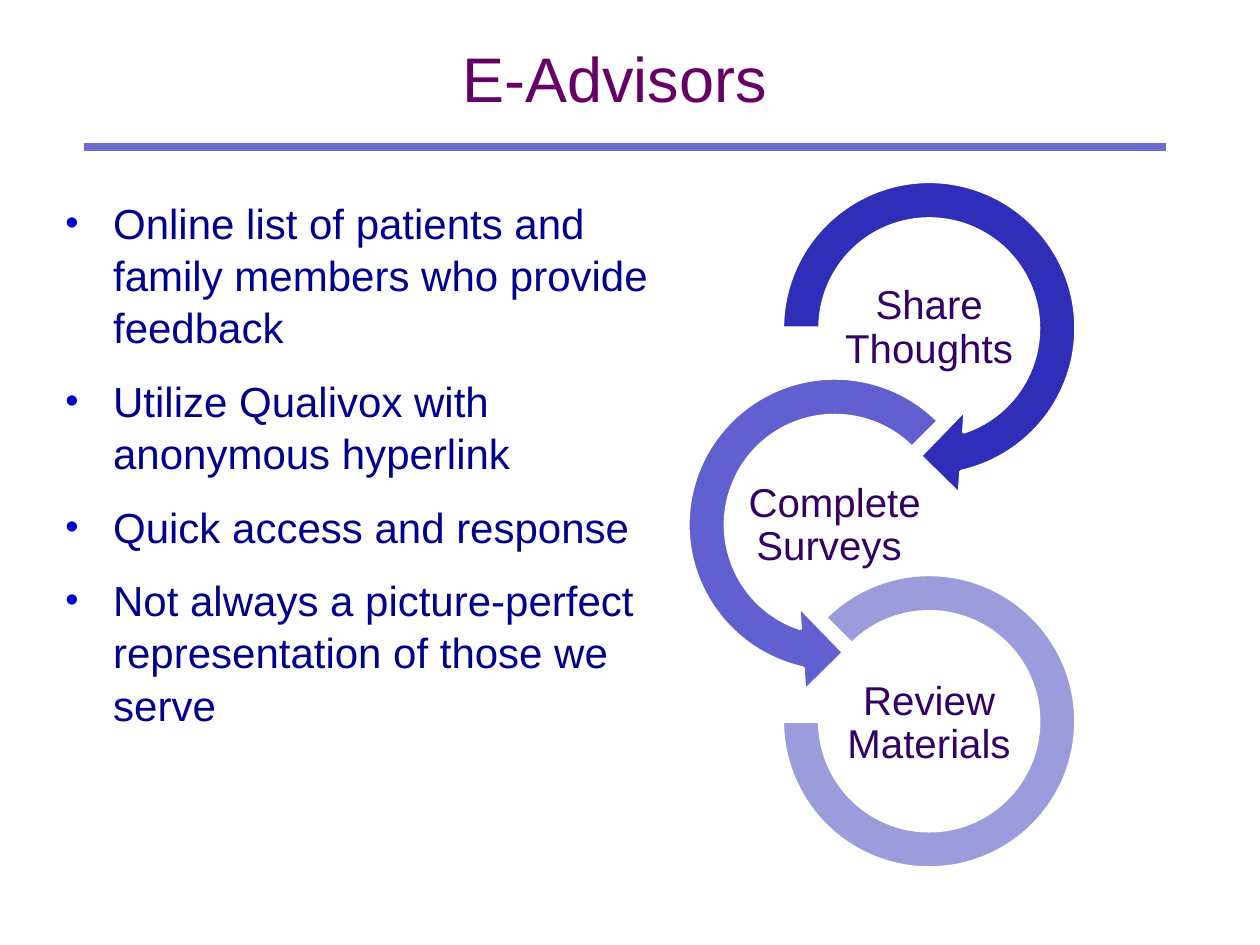
"""Builds the E-Advisors slide with its bullet list and three-step ring diagram."""
from lxml.etree import SubElement
from pptx import Presentation
from pptx.dml.color import RGBColor
from pptx.enum.shapes import MSO_CONNECTOR as Connector, MSO_SHAPE as Shape
from pptx.enum.text import MSO_ANCHOR as Anchor, PP_ALIGN as Align
from pptx.oxml.ns import qn
from pptx.util import Inches, Pt


def color(value):
    return RGBColor.from_string(value)


def write(paragraph, text, size, hue, **formats):
    paragraph.text = text
    for key, value in formats.items():
        setattr(paragraph, key, value)
    font = paragraph.runs[0].font
    for key, value in {"name": "Arial", "size": Pt(size)}.items():
        setattr(font, key, value)
    font.color.rgb = color(hue)


deck = Presentation()
deck.slide_width, deck.slide_height = Inches(10), Inches(7.5)
slide = deck.slides.add_slide(deck.slide_layouts[6])
shapes = slide.shapes

title = shapes.add_textbox(Inches(0.75), Inches(0.36), Inches(8.26), Inches(1.22)).text_frame
title.word_wrap = True
write(title.paragraphs[0], "E-Advisors", 36, "660066", alignment=Align.CENTER, line_spacing=0.85)

points = [
    "Online list of patients and family members who provide feedback",
    "Utilize Qualivox with anonymous hyperlink",
    "Quick access and response",
    "Not always a picture-perfect representation of those we serve",
]
body = shapes.add_textbox(Inches(0.42), Inches(1.5), Inches(4.83), Inches(5.67)).text_frame
body.word_wrap = True
for index, point in enumerate(points):
    paragraph = body.add_paragraph() if index else body.paragraphs[0]
    properties = paragraph._p.get_or_add_pPr()
    properties.set("marL", str(Inches(0.38)))
    properties.set("indent", str(-Inches(0.38)))
    bullet_color = SubElement(properties, qn("a:buClr"))
    SubElement(bullet_color, qn("a:srgbClr"), val="0000CC")
    SubElement(properties, qn("a:buSzPct"), val="90000")
    SubElement(properties, qn("a:buFont"), typeface="Arial")
    SubElement(properties, qn("a:buChar"), char="•")
    write(paragraph, point, 24, "000090", line_spacing=1.04, space_before=Pt(12 if index else 0))

steps = [
    ("Share Thoughts", Shape.CIRCULAR_ARROW, 6.02, 1.25, 2.71,
     (0.11, 11.42, 45, 108, 0.125), "2E2EB9", 6.62, 2.23),
    ("Complete Surveys ", Shape.LEFT_CIRCULAR_ARROW, 5.27, 2.81, 2.71,
     (0.11, 11.42, 63, 189, 0.125), "6060D0", 5.87, 3.8),
    ("Review Materials", Shape.BLOCK_ARC, 6.21, 4.56, 2.33,
     (135, 108, 0.127), "9C9CDD", 6.62, 5.37),
]
for label, kind, left, top, size, bends, hue, label_left, label_top in steps:
    ring = shapes.add_shape(kind, Inches(left), Inches(top), Inches(size), Inches(size))
    ring.shadow.inherit = False
    for position, bend in enumerate(bends):
        ring.adjustments[position] = bend
    ring.fill.solid()
    ring.fill.fore_color.rgb = color(hue)
    ring.line.color.rgb = color("FFFFFF")
    ring.line.width = Pt(2)

    caption = shapes.add_textbox(
        Inches(label_left), Inches(label_top), Inches(1.51), Inches(0.75)).text_frame
    margins = dict.fromkeys(
        ("margin_left", "margin_right", "margin_top", "margin_bottom"), Inches(0.02))
    for key, value in {"word_wrap": True, "vertical_anchor": Anchor.MIDDLE, **margins}.items():
        setattr(caption, key, value)
    write(caption.paragraphs[0], label, 23, "330066", alignment=Align.CENTER, line_spacing=0.9)

rule = shapes.add_connector(
    Connector.STRAIGHT, Inches(0.67), Inches(1.17), Inches(9.25), Inches(1.17))
rule.line.color.rgb = color("6B6BCF")
rule.line.width = Pt(4.5)
SubElement(rule._element.spPr, qn("a:effectLst"))

deck.save("out.pptx")
